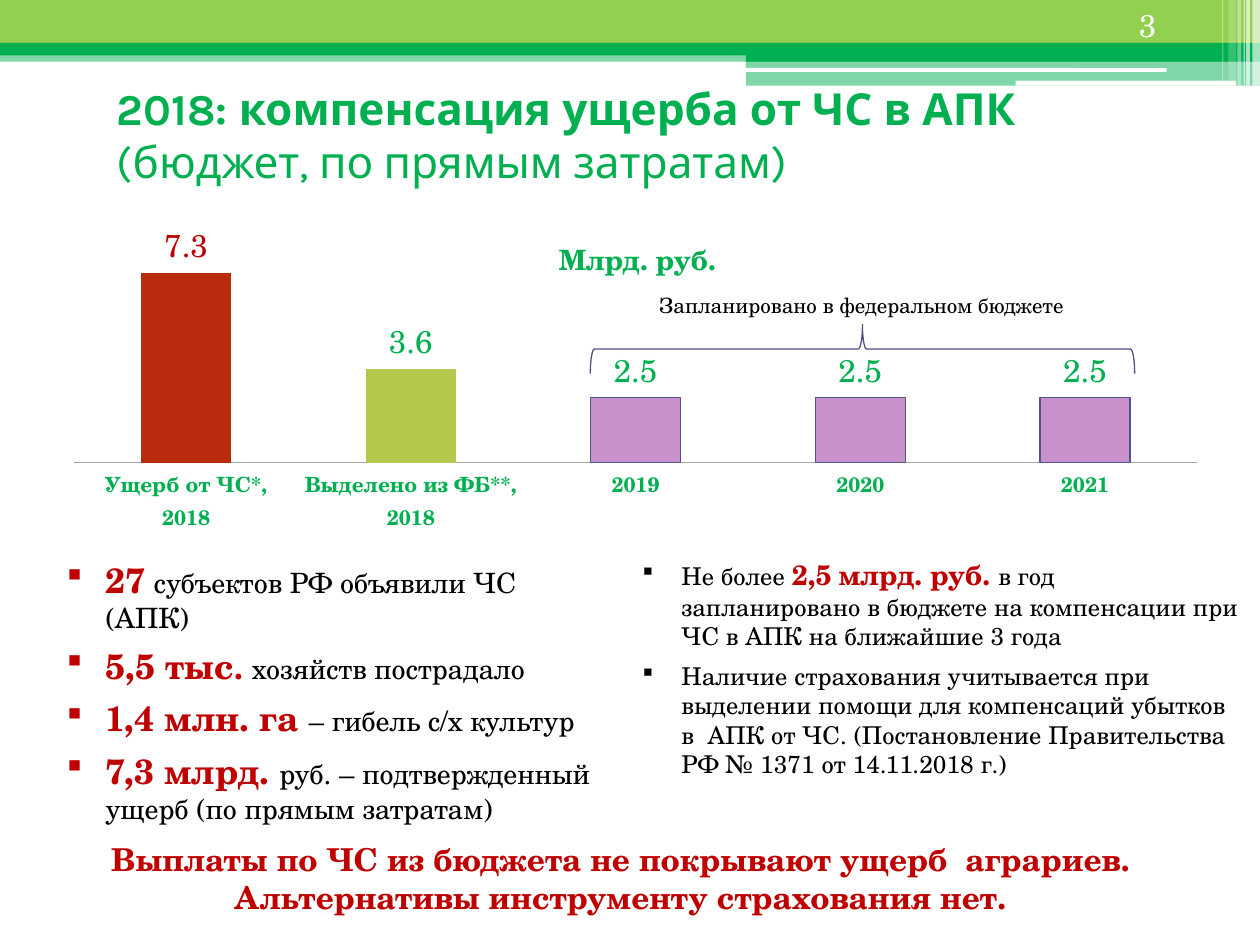
from lxml.etree import SubElement
from pptx import Presentation
from pptx.chart.data import CategoryChartData
from pptx.dml.color import RGBColor
from pptx.enum.chart import XL_CHART_TYPE, XL_LABEL_POSITION, XL_TICK_LABEL_POSITION, XL_TICK_MARK
from pptx.enum.shapes import MSO_SHAPE
from pptx.enum.text import MSO_ANCHOR, MSO_AUTO_SIZE, PP_ALIGN
from pptx.oxml import parse_xml
from pptx.oxml.ns import nsdecls, qn
from pptx.util import Inches, Pt

SERIF, SANS = "TeX Gyre Schola", "Karla"
GREEN, LIME, RED, BLACK, WHITE = "00B050", "92D050", "C00000", "000000", "FFFFFF"
INDENT = Inches(0.31)

presentation = Presentation()
presentation.slide_width, presentation.slide_height = Inches(10), Inches(7.5)
slide = presentation.slides.add_slide(presentation.slide_layouts[6])
# The grid has 100 columns and 75 rows.
column, row = presentation.slide_width / 100, presentation.slide_height / 75


def cells(left, top, width, height):
    """Turn a place on the grid into lengths."""
    return int(left * column), int(top * row), int(width * column), int(height * row)


def add_text(place, paragraphs, align=PP_ALIGN.LEFT, bullets=False, font=SERIF):
    """Add a text box; each paragraph is a list of (text, size, colour, bold)."""
    text_frame = slide.shapes.add_textbox(*cells(*place)).text_frame
    text_frame.word_wrap = True
    for index, runs in enumerate(paragraphs):
        paragraph = text_frame.add_paragraph() if index else text_frame.paragraphs[0]
        paragraph.alignment = align
        if bullets:
            paragraph.space_after = Pt(6)
            properties = paragraph._p.get_or_add_pPr()
            properties.set("marL", str(INDENT))
            properties.set("indent", str(-INDENT))
            SubElement(properties, qn("a:buFont")).set("typeface", "Wingdings")
            SubElement(properties, qn("a:buChar")).set("char", "§")
        for text, size, color, bold in runs:
            run = paragraph.add_run()
            run.text = text
            run.font.name, run.font.size, run.font.bold = font, Pt(size), bold
            run.font.color.rgb = RGBColor.from_string(color)
    return text_frame


# Header bands and the stripes at the right edge: place, colour, opacity in percent
bands = [
    ((0, 4, 100, 0.9), GREEN, 50),
    ((0, 0, 100, 3.4), LIME, 100),
    ((0, 3.4, 100, 1), GREEN, 100),
    ((59.2, 3.9, 40.8, 1), GREEN, 100),
    ((59.2, 4.8, 40.8, 2), GREEN, 50),
    ((59.1, 5.4, 33.5, 0.3), WHITE, 100),
    ((80.6, 6.4, 17.5, 0.4), WHITE, 100),
]
stripes = [(99.4, 0.6, 6.8, 65), (98.9, 0.3, 6.8, 65), (98.7, 0.1, 6.8, 60),
           (98.2, 0.3, 6.8, 40), (97.5, 0.6, 6.4, 20), (97, 0.1, 6.4, 30)]
bands += [((left, 0, width, height), WHITE, opacity) for left, width, height, opacity in stripes]
for place, color, opacity in bands:
    preset = MSO_SHAPE.ROUNDED_RECTANGLE if place[1] > 5 else MSO_SHAPE.RECTANGLE
    band = slide.shapes.add_shape(preset, *cells(*place))
    band.shadow.inherit = False
    band.line.fill.background()
    band.fill.solid()
    band.fill.fore_color.rgb = RGBColor.from_string(color)
    if opacity < 100:
        fill_color = band._element.spPr.find(qn("a:solidFill"))[0]
        SubElement(fill_color, qn("a:alpha")).set("val", str(opacity * 1000))

title_frame = add_text((8.3, 6, 90.6, 6.9), [[]], font=SANS)
title_frame.text = "2018: компенсация ущерба от ЧС в АПК\v(бюджет, по прямым затратам)"
for run, bold in zip(title_frame.paragraphs[0].runs, (True, False)):
    run.font.name, run.font.size, run.font.bold = SANS, Pt(25.2), bold
    run.font.color.rgb = RGBColor.from_string(GREEN)

# Chart
chart_data = CategoryChartData(number_format="0.0")
chart_data.categories = ["Ущерб от ЧС*, 2018", "Выделено из ФБ**, 2018", "2019", "2020", "2021"]
chart_data.add_series("Млрд. руб.", (7.3, 3.6, 2.5, 2.5, 2.5))
chart = slide.shapes.add_chart(
    XL_CHART_TYPE.COLUMN_CLUSTERED, *cells(4, 13.9, 92.9, 28.9), chart_data).chart
chart.has_legend = False
chart.font.name, chart.font.size = SERIF, Pt(18)
chart.font.color.rgb = RGBColor.from_string(GREEN)

chart.chart_title.text_frame.text = "Млрд. руб."
title_font = chart.chart_title.text_frame.paragraphs[0].runs[0].font
title_font.name, title_font.size, title_font.bold = SERIF, Pt(16), True
title_font.color.rgb = RGBColor.from_string(GREEN)

category_axis, value_axis = chart.category_axis, chart.value_axis
category_axis.major_tick_mark = XL_TICK_MARK.NONE
category_axis.tick_labels.font.size = Pt(12)
category_axis.tick_labels.font.bold = True
category_axis.format.line.color.rgb = RGBColor.from_string("A6A6A6")
category_axis.format.line.width = Pt(0.5)
value_axis.visible = False
value_axis.has_major_gridlines = False
value_axis.tick_label_position = XL_TICK_LABEL_POSITION.NONE
value_axis.minimum_scale, value_axis.maximum_scale = 0, 8

plot = chart.plots[0]
plot.gap_width = 150
plot.vary_by_categories = False
series = plot.series[0]
series.data_labels.show_value = True
series.data_labels.position = XL_LABEL_POSITION.OUTSIDE_END
for index, color in enumerate(["BA2B0E", "B6C84C"] + ["C991CB"] * 3):
    point = series.points[index]
    point.format.fill.solid()
    point.format.fill.fore_color.rgb = RGBColor.from_string(color)
    if index > 1:
        point.format.line.color.rgb = RGBColor.from_string("53548A")
        point.format.line.width = Pt(0.75)
damage_label = series.points[0].data_label
damage_label.font.size = Pt(18)
damage_label.font.color.rgb = RGBColor.from_string(RED)
damage_label.position = XL_LABEL_POSITION.OUTSIDE_END

# Places of the plot area and of the title, as shares of the chart
layouts = [
    (chart._chartSpace.chart.plotArea, {"x": 0.02, "y": 0.22, "w": 0.96, "h": 0.57}),
    (chart.chart_title._element, {"x": 0.43, "y": 0.15}),
]
for element, shares in layouts:
    for old_layout in element.findall(qn("c:layout")):
        element.remove(old_layout)
    target = '<c:layoutTarget val="inner"/>' if "w" in shares else ""
    modes = "".join(f'<c:{key}Mode val="edge"/>' for key in "xy")
    values = "".join(f'<c:{key} val="{share}"/>' for key, share in shares.items())
    layout = parse_xml(f'<c:layout {nsdecls("c")}><c:manualLayout>'
                       f'{target}{modes}{values}</c:manualLayout></c:layout>')
    text = element.find(qn("c:tx"))
    element.insert(0 if text is None else 1, layout)

brace = slide.shapes.add_shape(MSO_SHAPE.RIGHT_BRACE, *cells(66.5, 6.1, 3.9, 43.2))
brace.rotation = 270
brace.shadow.inherit = False
brace.fill.background()
brace.line.color.rgb = RGBColor.from_string("505188")
brace.line.width = Pt(0.75)
add_text((51.1, 22.7, 34.6, 3), [[("Запланировано в федеральном бюджете", 12, BLACK, False)]],
         PP_ALIGN.CENTER)

add_text((4.3, 43.8, 44.9, 19.7), [
    [("27", 20, RED, True), (" субъектов РФ объявили ЧС (АПК)", 16, BLACK, False)],
    [("5,5 тыс", 20, RED, True), (". ", 18, RED, True),
     ("хозяйств пострадало", 16, BLACK, False)],
    [("1,4 млн. га ", 20, RED, True), ("– гибель с/х культур", 16, BLACK, False)],
    [("7,3 млрд. ", 20, RED, True),
     ("руб. – подтвержденный ущерб (по прямым затратам)", 16, BLACK, False)],
], bullets=True)
add_text((2.6, 66.2, 93.3, 7.1), [[
    ("Выплаты по ЧС из бюджета не покрывают ущерб  аграриев. "
     "Альтернативы инструменту страхования нет.", 18, RED, True)]], PP_ALIGN.CENTER)
add_text((50, 43.8, 49.35, 18.7), [
    [("Не более ", 14, BLACK, False), ("2,5", 16, RED, True), (" ", 14, BLACK, False),
     ("млрд. руб. ", 16, RED, True),
     ("в год запланировано в бюджете на компенсации при ЧС в АПК на ближайшие 3 года",
      14, BLACK, False)],
    [("Наличие страхования учитывается при выделении помощи для компенсаций убытков "
      "в  АПК от ЧС. (Постановление Правительства РФ № 1371 от 14.11.2018 г.)",
      14, BLACK, False)],
], bullets=True)
number_frame = add_text((89.4, 0, 8.3, 4), [[("3", 18, WHITE, False)]])
number_frame.vertical_anchor = MSO_ANCHOR.MIDDLE
number_frame.auto_size = MSO_AUTO_SIZE.NONE

presentation.save("out.pptx")
